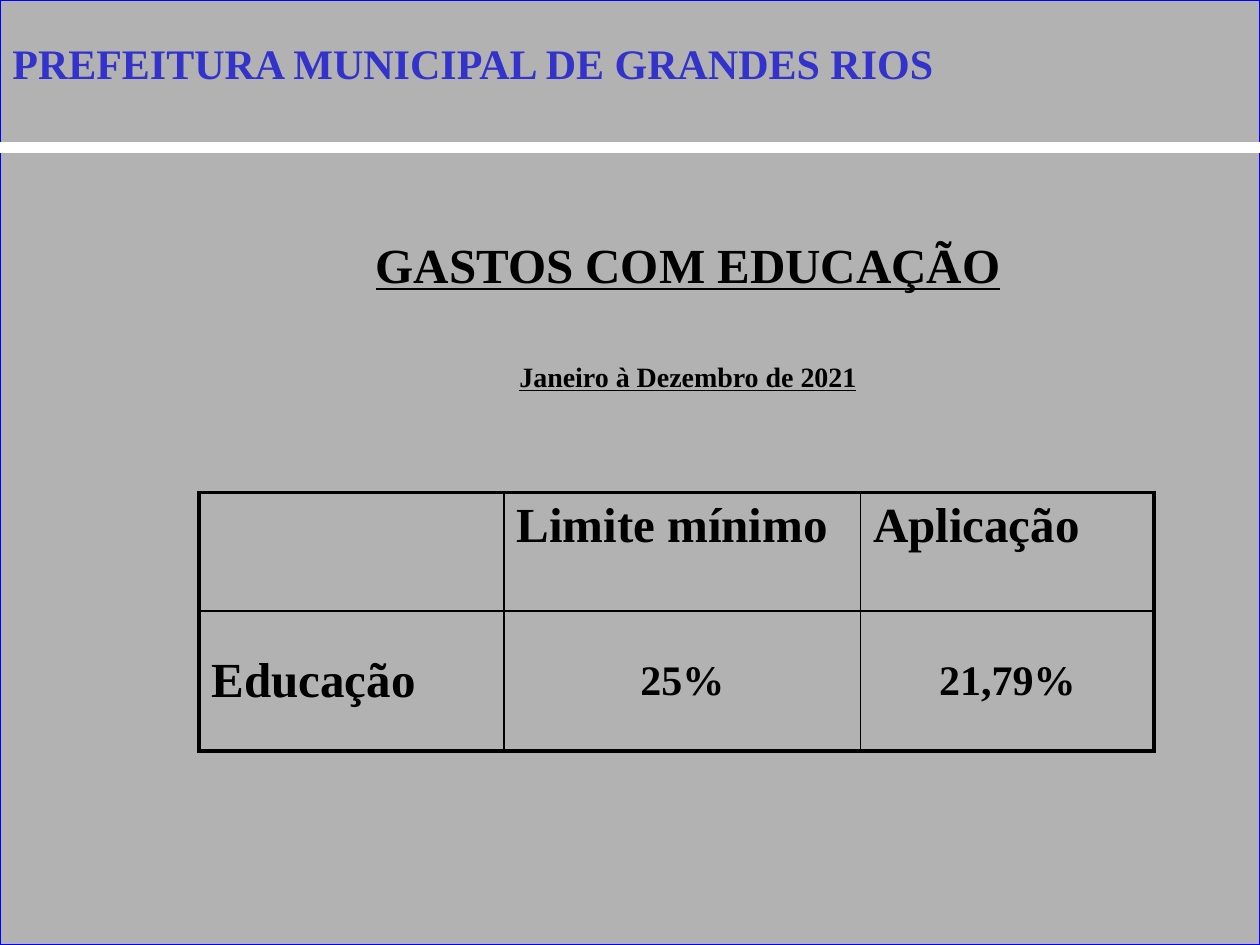
from lxml import etree
from pptx import Presentation
from pptx.dml.color import RGBColor
from pptx.enum.shapes import MSO_CONNECTOR, MSO_SHAPE
from pptx.enum.text import MSO_ANCHOR, PP_ALIGN
from pptx.oxml.ns import qn
from pptx.util import Inches, Pt

LEFT, CENTER = PP_ALIGN.LEFT, PP_ALIGN.CENTER
TOP, MIDDLE = MSO_ANCHOR.TOP, MSO_ANCHOR.MIDDLE
BLACK = RGBColor(0, 0, 0)
WHITE = RGBColor(255, 255, 255)
GRAY = RGBColor(0xB2, 0xB2, 0xB2)
FRAME_BLUE = RGBColor(0, 0, 255)
TITLE_BLUE = RGBColor(0x33, 0x33, 0xCC)
FONT = "Times New Roman"

# Content
ORGANIZATION = "PREFEITURA MUNICIPAL DE GRANDES RIOS"
HEADING = "GASTOS COM EDUCAÇÃO"
PERIOD = "Janeiro à Dezembro de 2021"
ROWS = [
    ["", "Limite mínimo", "Aplicação"],
    ["Educação", "25%", "21,79%"],
]
COLUMN_WIDTHS = [2.42, 2.83, 2.33]
ROW_HEIGHTS = [0.94, 1.11]
OUTER_BORDER, INNER_BORDER = 2.25, 1


def write(paragraph, text, size=28, color=BLACK, align=LEFT, underline=False):
    paragraph.alignment = align
    run = paragraph.add_run()
    run.text = text
    run.font.name = FONT
    run.font.size = Pt(size)
    run.font.bold = True
    run.font.underline = underline
    run.font.color.rgb = color
    return run


def add_text_frame(slide, left, top, width, height):
    text_frame = slide.shapes.add_textbox(
        Inches(left), Inches(top), Inches(width), Inches(height)).text_frame
    text_frame.word_wrap = True
    return text_frame


def add_text_shadow(run):
    properties = run.font._element
    effects = etree.Element(qn("a:effectLst"))
    shadow = etree.SubElement(effects, qn("a:outerShdw"), dist="35921", dir="2700000")
    etree.SubElement(shadow, qn("a:srgbClr"), val="808080")
    properties.find(qn("a:solidFill")).addnext(effects)


def set_borders(cell, widths):
    """Insert the left, right, top and bottom borders ahead of the cell fill."""
    properties = cell._tc.get_or_add_tcPr()
    for index, (side, width) in enumerate(widths.items()):
        border = etree.Element(qn(f"a:ln{side}"), w=str(Pt(width)))
        fill = etree.SubElement(border, qn("a:solidFill"))
        etree.SubElement(fill, qn("a:srgbClr"), val=str(BLACK))
        properties.insert(index, border)


def add_background(slide):
    background = slide.shapes.add_shape(
        MSO_SHAPE.RECTANGLE, 0, 0, Inches(10), Inches(7.5))
    background.shadow.inherit = False
    background.fill.solid()
    background.fill.fore_color.rgb = GRAY
    background.line.color.rgb = FRAME_BLUE
    background.line.width = Pt(0.75)

    divider = slide.shapes.add_connector(
        MSO_CONNECTOR.STRAIGHT, 0, Inches(1.17), Inches(10), Inches(1.17))
    divider.line.color.rgb = WHITE
    divider.line.width = Pt(6)
    etree.SubElement(divider._element.spPr, qn("a:effectLst"))


def add_headings(slide):
    text_frame = add_text_frame(slide, 1.42, 1.58, 8.08, 6.26)
    heading = text_frame.paragraphs[0]
    period = text_frame.add_paragraph()
    write(heading, HEADING, align=CENTER, underline=True)
    write(period, PERIOD, size=16, align=CENTER, underline=True)
    heading.line_spacing = period.line_spacing = 1.5
    period.space_before = Pt(28)


def add_spending_table(slide):
    table = slide.shapes.add_table(
        len(ROWS), len(COLUMN_WIDTHS), Inches(1.58), Inches(3.91),
        Inches(sum(COLUMN_WIDTHS)), Inches(sum(ROW_HEIGHTS))).table
    for column, width in zip(table.columns, COLUMN_WIDTHS):
        column.width = Inches(width)
    for row, height in zip(table.rows, ROW_HEIGHTS):
        row.height = Inches(height)

    last_row, last_column = len(ROWS) - 1, len(COLUMN_WIDTHS) - 1
    for row_index, row in enumerate(ROWS):
        for column_index, text in enumerate(row):
            cell = table.cell(row_index, column_index)
            cell.fill.background()
            cell.vertical_anchor = MIDDLE if row_index else TOP
            is_value = row_index > 0 and column_index > 0
            if text:
                write(cell.text_frame.paragraphs[0], text,
                      size=24 if is_value else 28,
                      align=CENTER if is_value else LEFT)
            on_edge = {
                "L": column_index == 0,
                "R": column_index == last_column,
                "T": row_index == 0,
                "B": row_index == last_row,
            }
            set_borders(cell, {side: OUTER_BORDER if edge else INNER_BORDER
                               for side, edge in on_edge.items()})


def add_organization(slide):
    text_frame = add_text_frame(slide, 0, 0.21, 9.49, 0.5)
    text_frame.margin_top = Inches(0.09)
    run = write(text_frame.paragraphs[0], ORGANIZATION, size=24, color=TITLE_BLUE)
    add_text_shadow(run)


def main():
    presentation = Presentation()
    presentation.slide_width = Inches(10)
    presentation.slide_height = Inches(7.5)
    slide = presentation.slides.add_slide(presentation.slide_layouts[6])
    add_background(slide)
    add_headings(slide)
    add_spending_table(slide)
    add_organization(slide)
    presentation.save("out.pptx")


if __name__ == "__main__":
    main()
